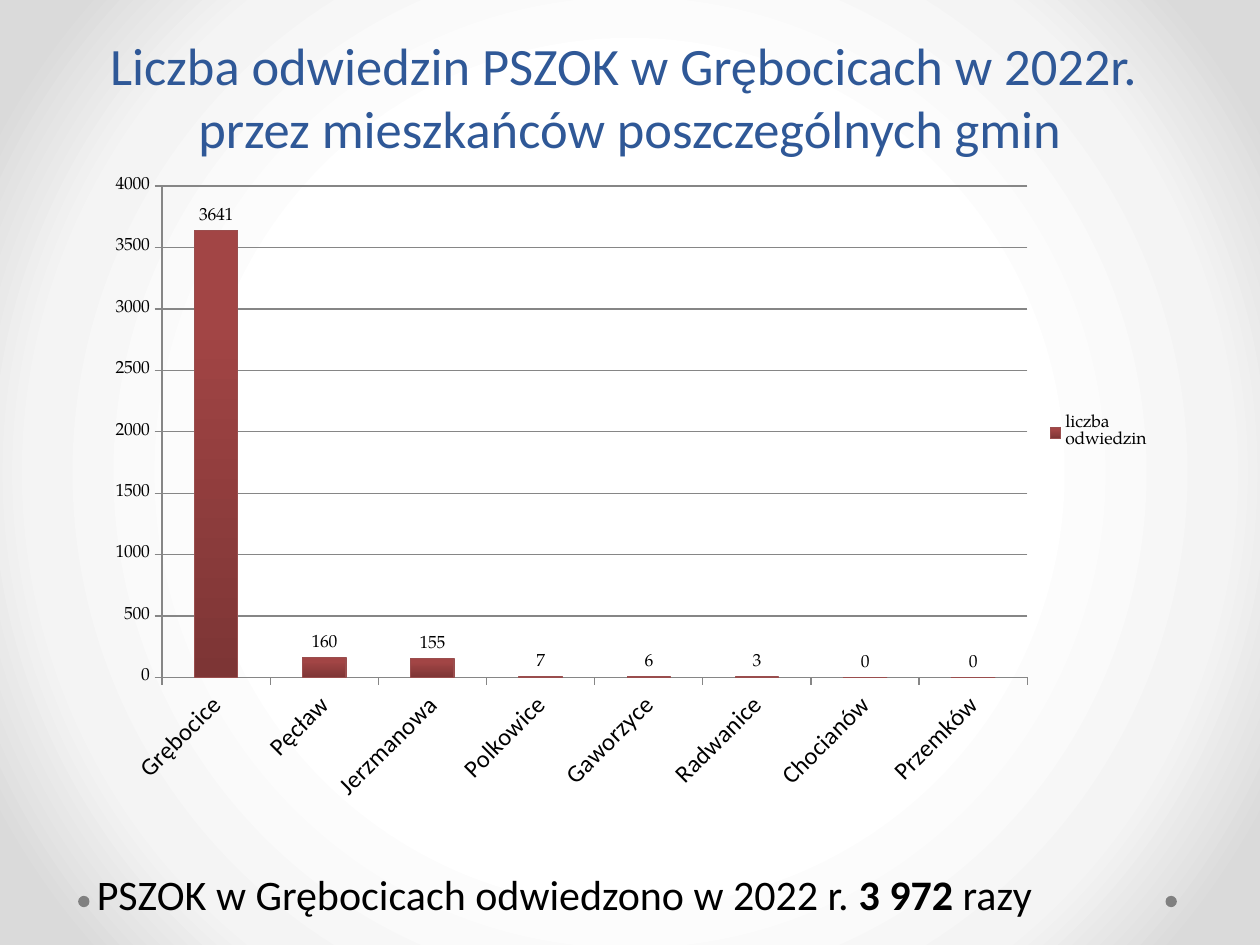
import dataclasses

import pptx
import pptx.chart.data
import pptx.dml.color
import pptx.enum.chart
import pptx.enum.shapes
import pptx.enum.text
import pptx.oxml
import pptx.oxml.ns
import pptx.util

WIDTH, HEIGHT = pptx.util.Inches(10), pptx.util.Inches(7.5)
BODY_FONT, CHART_FONT = "Calibri", "TeX Gyre Pagella"
COLORS = {
    "title": "2F5897", "text": "000000", "dot": "808080",
    "grid": "868686", "bar_line": "9A4E4E",
}
BACKDROP_STOPS = [(50, "FFFFFF"), (76, "F4F4F4"), (92, "DADADA")]
BAR_STOPS = [(0, "7D3535"), (80, "A24545"), (100, "A44343")]
CIRCLE = ('<a:path {ns} path="circle"><a:fillToRect l="50000" t="50000" '
          'r="50000" b="50000"/></a:path>')
UPWARD = '<a:lin {ns} ang="16200000" scaled="0"/>'
VISITS = {
    "Grębocice": 3641, "Pęcław": 160, "Jerzmanowa": 155, "Polkowice": 7,
    "Gaworzyce": 6, "Radwanice": 3, "Chocianów": 0, "Przemków": 0,
}


@dataclasses.dataclass
class Area:
    left: float
    top: float
    width: float
    height: float

    def box(self) -> tuple[int, int, int, int]:
        return (int(self.left * WIDTH), int(self.top * HEIGHT),
                int(self.width * WIDTH), int(self.height * HEIGHT))


@dataclasses.dataclass
class Phrase:
    text: str
    size: int
    color: str
    bold: bool = False


TITLE_AREA = Area(0.05, 0, 0.9, 0.175)
CHART_AREA = Area(0.075, 0.175, 0.852, 0.687)
PLOT_SHARE = Area(0.063, 0.032, 0.806, 0.757)
LEGEND_SHARE = Area(0.88, 0.375, 0.11, 0.075)
SUMMARY_AREA = Area(0.067, 0.912, 0.763, 0.067)
DOTS = [Area(left, 0.948, 0.009, 0.012) for left in (0.925, 0.062)]
TITLE = [
    Phrase("Liczba odwiedzin PSZOK w Grębocicach w 2022r. ", 30, "title"),
    Phrase("przez mieszkańców poszczególnych gmin", 30, "title"),
]
SUMMARY = [
    Phrase("PSZOK w Grębocicach odwiedzono w 2022 r. ", 24, "text"),
    Phrase("3 972 ", 24, "text", True),
    Phrase("razy", 24, "text"),
]


def rgb(name: str) -> pptx.dml.color.RGBColor:
    return pptx.dml.color.RGBColor.from_string(COLORS[name])


def set_gradient(fill, owner, stops: list[tuple[int, str]], direction: str) -> None:
    fill.gradient()
    gradient = owner.find(".//" + pptx.oxml.ns.qn("a:gradFill"))
    for child in list(gradient):
        gradient.remove(child)
    ns = pptx.oxml.ns.nsdecls("a")
    marks = "".join(f'<a:gs pos="{share * 1000}"><a:srgbClr val="{color}"/></a:gs>'
                    for share, color in stops)
    gradient.append(pptx.oxml.parse_xml(f"<a:gsLst {ns}>{marks}</a:gsLst>"))
    gradient.append(pptx.oxml.parse_xml(direction.format(ns=ns)))


def set_layout(part, share: Area, index: int, target: str = "") -> None:
    for old in part.findall(pptx.oxml.ns.qn("c:layout")):
        part.remove(old)
    part.insert(index, pptx.oxml.parse_xml(
        f'<c:layout {pptx.oxml.ns.nsdecls("c")}><c:manualLayout>{target}'
        '<c:xMode val="edge"/><c:yMode val="edge"/>'
        f'<c:x val="{share.left}"/><c:y val="{share.top}"/>'
        f'<c:w val="{share.width}"/><c:h val="{share.height}"/>'
        '</c:manualLayout></c:layout>'))


def style_font(font, name: str, size: float, color: str = "text") -> None:
    font.name, font.size = name, pptx.util.Pt(size)
    font.color.rgb = rgb(color)


def style_line(line, color: str) -> None:
    line.color.rgb = rgb(color)
    line.width = pptx.util.Pt(0.75)


def add_phrase(paragraph, phrase: Phrase) -> None:
    run = paragraph.add_run()
    run.text = phrase.text
    style_font(run.font, BODY_FONT, phrase.size, phrase.color)
    run.font.bold = phrase.bold


def draw_dot(slide, area: Area) -> None:
    dot = slide.shapes.add_shape(pptx.enum.shapes.MSO_SHAPE.OVAL, *area.box())
    dot.shadow.inherit = False
    dot.fill.solid()
    dot.fill.fore_color.rgb = rgb("dot")
    dot.line.fill.background()


def draw_title(slide) -> None:
    title = slide.shapes.title
    title.left, title.top, title.width, title.height = TITLE_AREA.box()
    frame = title.text_frame
    frame.auto_size = pptx.enum.text.MSO_AUTO_SIZE.NONE
    frame.vertical_anchor = pptx.enum.text.MSO_ANCHOR.BOTTOM
    paragraph = frame.paragraphs[0]
    paragraph.alignment = pptx.enum.text.PP_ALIGN.CENTER
    add_phrase(paragraph, TITLE[0])
    paragraph.add_line_break()
    add_phrase(paragraph, TITLE[1])


def draw_summary(slide) -> None:
    frame = slide.shapes.add_textbox(*SUMMARY_AREA.box()).text_frame
    frame.word_wrap = True
    for phrase in SUMMARY:
        add_phrase(frame.paragraphs[0], phrase)


def draw_visits(slide) -> None:
    enums = pptx.enum.chart
    data = pptx.chart.data.CategoryChartData(number_format="General")
    data.categories = list(VISITS)
    data.add_series("liczba odwiedzin", list(VISITS.values()))
    chart = slide.shapes.add_chart(
        enums.XL_CHART_TYPE.COLUMN_CLUSTERED, *CHART_AREA.box(), data).chart
    style_font(chart.font, CHART_FONT, 10)
    chart.has_title = False
    chart.has_legend = True
    chart.legend.position = enums.XL_LEGEND_POSITION.RIGHT
    chart.legend.include_in_layout = False
    set_layout(chart.legend._element, LEGEND_SHARE, 1)
    plot_area = chart._chartSpace.find(".//" + pptx.oxml.ns.qn("c:plotArea"))
    set_layout(plot_area, PLOT_SHARE, 0, '<c:layoutTarget val="inner"/>')

    towns, counts = chart.category_axis, chart.value_axis
    counts.has_major_gridlines = True
    for part in (towns, counts, counts.major_gridlines):
        style_line(part.format.line, "grid")
    for axis in (towns, counts):
        axis.major_tick_mark = enums.XL_TICK_MARK.OUTSIDE
    style_font(towns.tick_labels.font, BODY_FONT, 14)
    slant = towns._element.find(".//" + pptx.oxml.ns.qn("a:bodyPr"))
    slant.set("rot", "-2700000")
    slant.set("vert", "horz")

    plot = chart.plots[0]
    plot.gap_width = 150
    plot.vary_by_categories = False
    plot.has_data_labels = True
    plot.data_labels.show_value = True
    plot.data_labels.position = enums.XL_LABEL_POSITION.OUTSIDE_END
    bars = plot.series[0]
    set_gradient(bars.format.fill, bars._element, BAR_STOPS, UPWARD)
    style_line(bars.format.line, "bar_line")


def main() -> None:
    deck = pptx.Presentation()
    deck.slide_width, deck.slide_height = WIDTH, HEIGHT
    slide = deck.slides.add_slide(deck.slide_layouts.get_by_name("Title Only"))
    set_gradient(slide.background.fill, slide._element, BACKDROP_STOPS, CIRCLE)
    for area in DOTS:
        draw_dot(slide, area)
    draw_visits(slide)
    draw_summary(slide)
    draw_title(slide)
    deck.save("out.pptx")


if __name__ == "__main__":
    main()
